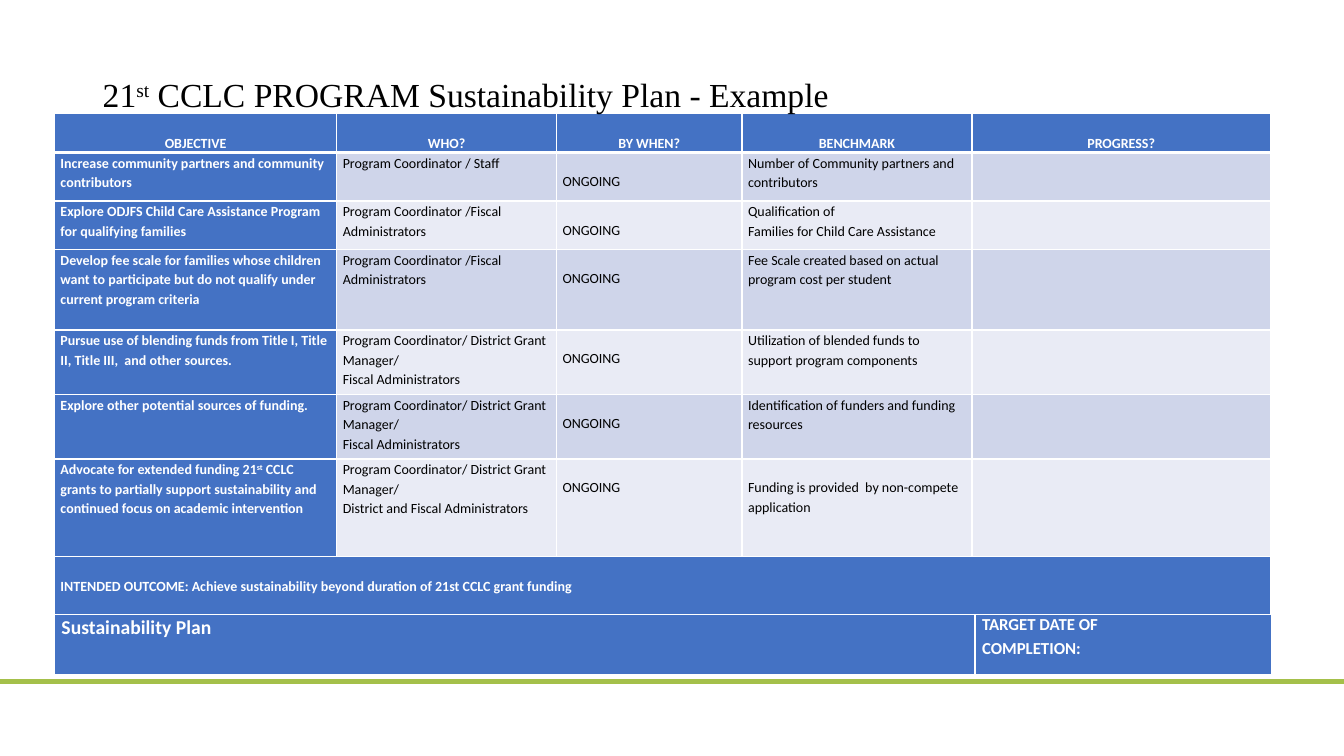
from dataclasses import dataclass

from lxml import etree
from pptx import Presentation, util as u
from pptx.dml.color import RGBColor
from pptx.enum import shapes, text
from pptx.oxml import ns

BLUE, WHITE, BLACK = "4472C4", "FFFFFF", "000000"
BANDS = ("CFD5EA", "E9EBF5")
LINE_SPACING = 1.15
CELL_INSET = 0.06


@dataclass(frozen=True)
class CellStyle:
    fill: str
    color: str = WHITE
    bold: bool = True
    sizes: tuple[float, ...] = (10,)
    align: text.PP_ALIGN = text.PP_ALIGN.LEFT
    inset: float = CELL_INSET
    top: float = 0
    bottom: float = 0
    bottom_border: float = 1


@dataclass(frozen=True)
class Goal:
    objective: str
    who: str
    benchmark: str
    height: float
    gap_size: float = 9
    benchmark_lowered: bool = False


def line_height(size: float) -> float:
    """Height in inches of one table line of Calibri at this point size."""
    return round(size * 1.22 * LINE_SPACING / 72, 2)


HEADINGS = ("OBJECTIVE", "WHO?", "BY WHEN?", "BENCHMARK", "PROGRESS?")
COLUMN_WIDTHS = (2.8, 2.18, 1.84, 2.28, 2.96)
HEADER_HEIGHT, OUTCOME_HEIGHT = 0.34, 0.51
OUTCOME = "INTENDED OUTCOME: Achieve sustainability beyond duration of 21st CCLC grant funding"
FISCAL = "Program Coordinator /Fiscal Administrators"
DISTRICT = "Program Coordinator/ District Grant Manager/\n"
GOALS = (
    Goal("Increase community partners and community contributors",
         "Program Coordinator / Staff",
         "Number of Community partners and contributors", 0.48),
    Goal("Explore ODJFS Child Care Assistance Program for qualifying families",
         FISCAL, "Qualification of\nFamilies for Child Care Assistance", 0.48, gap_size=10),
    Goal("Develop fee scale for families whose children want to participate "
         "but do not qualify under current program criteria",
         FISCAL, "Fee Scale created based on actual program cost per student", 0.8),
    Goal("Pursue use of blending funds from Title I, Title II, Title III,  and other sources.",
         DISTRICT + "Fiscal Administrators",
         "Utilization of blended funds to support program components", 0.64),
    Goal("Explore other potential sources of funding.",
         DISTRICT + "Fiscal Administrators",
         "Identification of funders and funding resources", 0.64),
    Goal("Advocate for extended funding 21^st^ CCLC grants to partially support "
         "sustainability and continued focus on academic intervention",
         DISTRICT + "District and Fiscal Administrators",
         "Funding is provided  by non-compete application", 0.97, benchmark_lowered=True),
)


def rgb(value: str) -> RGBColor:
    return RGBColor.from_string(value)


def apply(target, values: dict) -> None:
    for name, value in values.items():
        setattr(target, name, value)


def add_runs(paragraph, content: str, color: str, **font_values) -> None:
    """Write the text, raising whatever stands between two carets."""
    for index, part in enumerate(content.split("^")):
        run = paragraph.add_run()
        run.text = part
        apply(run.font, font_values)
        run.font.color.rgb = rgb(color)
        if index % 2:
            run.font._element.set("baseline", "30000")


def add_border(cell, side: str, width: float) -> None:
    properties = cell._tc.get_or_add_tcPr()
    line = etree.SubElement(properties, ns.qn(f"a:ln{side}"), w=str(u.Pt(width)))
    fill = etree.SubElement(line, ns.qn("a:solidFill"))
    etree.SubElement(fill, ns.qn("a:srgbClr"), val=WHITE)


def fill_cell(cell, content: str, style: CellStyle) -> None:
    for side in "LRTB":
        add_border(cell, side, style.bottom_border if side == "B" else 1)
    cell.fill.solid()
    cell.fill.fore_color.rgb = rgb(style.fill)
    apply(cell, {"margin_left": u.Inches(style.inset), "margin_right": u.Inches(style.inset),
                 "margin_top": u.Inches(style.top), "margin_bottom": u.Inches(style.bottom)})
    for index, line in enumerate(content.split("\n")):
        frame = cell.text_frame
        paragraph = frame.add_paragraph() if index else frame.paragraphs[0]
        apply(paragraph, {"alignment": style.align, "line_spacing": LINE_SPACING})
        size = u.Pt(style.sizes[min(index, len(style.sizes) - 1)])
        if line:
            add_runs(paragraph, line, style.color, name="Calibri", size=size, bold=style.bold)
        else:
            paragraph.font.size = size


def add_plain_table(slide, top: float, widths: tuple[float, ...], heights: tuple[float, ...]):
    table = slide.shapes.add_table(
        len(heights), len(widths), u.Inches(0.54), u.Inches(top),
        u.Inches(sum(widths)), u.Inches(sum(heights))).table
    apply(table, {"first_row": False, "horz_banding": False})
    for column, width in zip(table.columns, widths):
        column.width = u.Inches(width)
    for row, height in zip(table.rows, heights):
        row.height = u.Inches(height)
    return table


def add_footer_rule(slide) -> None:
    rule = slide.shapes.add_connector(
        shapes.MSO_CONNECTOR.STRAIGHT, 0, u.Inches(6.76), u.Inches(13.33), u.Inches(6.76))
    rule.line.color.rgb = rgb("A4C04A")
    rule.line.width = u.Pt(4)
    etree.SubElement(rule._element.spPr, ns.qn("a:effectLst"))


def add_summary_table(slide) -> None:
    table = add_plain_table(slide, 6.07, (9.13, 2.94), (0.64,))
    for column, (content, size) in enumerate(
            (("Sustainability Plan", 14), ("TARGET DATE OF\nCOMPLETION:", 12))):
        fill_cell(table.cell(0, column), content,
                  CellStyle(BLUE, sizes=(size,), inset=0.07, bottom_border=3))


def add_goal_table(slide) -> None:
    heights = (HEADER_HEIGHT, *(goal.height for goal in GOALS), OUTCOME_HEIGHT)
    table = add_plain_table(slide, 1.13, COLUMN_WIDTHS, heights)
    line = line_height(10)

    header = CellStyle(BLUE, align=text.PP_ALIGN.CENTER, top=line, bottom_border=3)
    for column, heading in enumerate(HEADINGS):
        fill_cell(table.cell(0, column), heading, header)

    for index, goal in enumerate(GOALS):
        band = BANDS[index % 2]
        plain = CellStyle(band, BLACK, False)
        lowered = CellStyle(band, BLACK, False, top=line_height(goal.gap_size))
        cells = ((goal.objective, CellStyle(BLUE)), (goal.who, plain), ("ONGOING", lowered),
                 (goal.benchmark, lowered if goal.benchmark_lowered else plain), ("", plain))
        for column, (content, style) in enumerate(cells):
            fill_cell(table.cell(index + 1, column), content, style)

    last = len(heights) - 1
    table.cell(last, 0).merge(table.cell(last, len(HEADINGS) - 1))
    for column in range(len(HEADINGS)):
        fill_cell(table.cell(last, column), "" if column else OUTCOME,
                  CellStyle(BLUE, top=line, bottom=line))


def add_title(slide) -> None:
    box = slide.shapes.add_textbox(u.Inches(0.92), u.Inches(0.64), u.Inches(11.31), u.Inches(0.98))
    apply(box.text_frame, {"word_wrap": True, "margin_top": u.Inches(0.09),
                           "vertical_anchor": text.MSO_ANCHOR.TOP})
    add_runs(box.text_frame.paragraphs[0], "21^st^ CCLC PROGRAM Sustainability Plan - Example",
             BLACK, name="Times New Roman", size=u.Pt(24))


def main() -> None:
    presentation = Presentation()
    apply(presentation, {"slide_width": u.Inches(13.33), "slide_height": u.Inches(7.5)})
    slide = presentation.slides.add_slide(presentation.slide_layouts[6])
    add_footer_rule(slide)
    add_summary_table(slide)
    add_goal_table(slide)
    add_title(slide)
    presentation.save("out.pptx")


if __name__ == "__main__":
    main()
